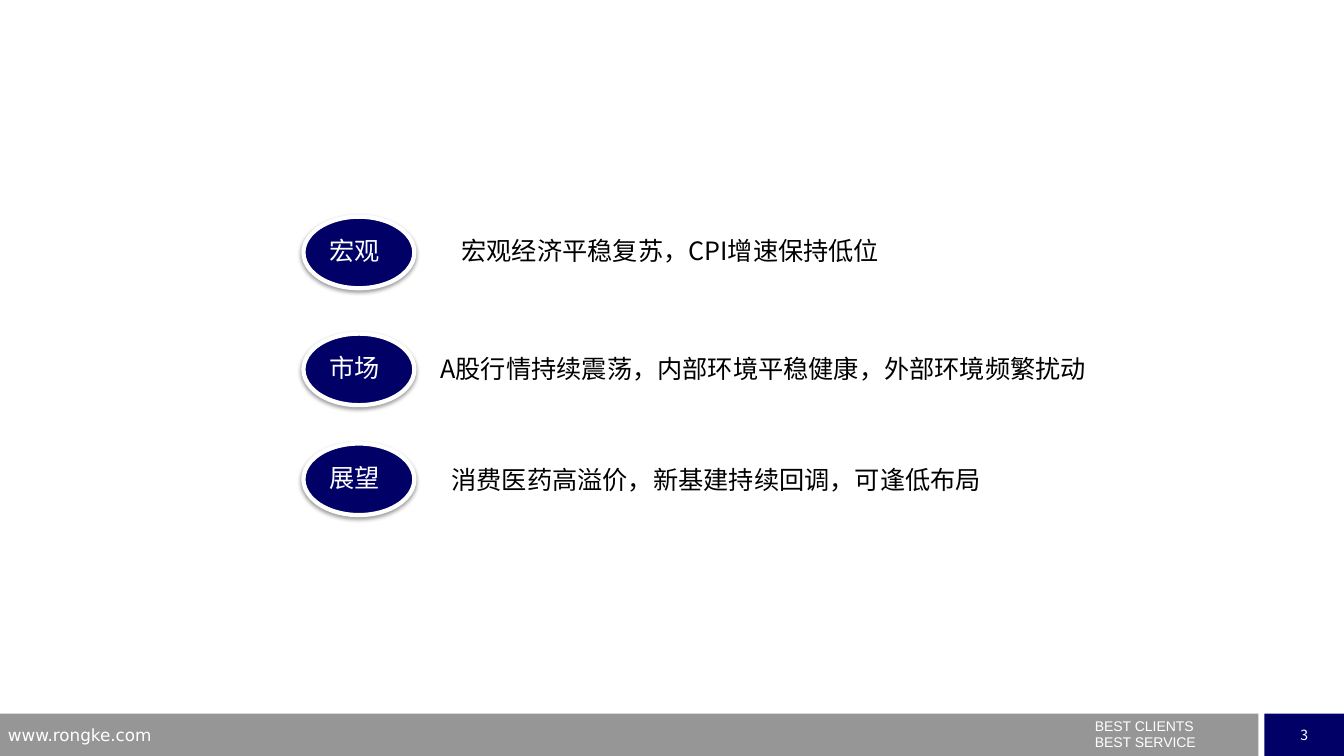
from lxml import etree
from pptx import Presentation
from pptx.dml.color import RGBColor
from pptx.enum.shapes import MSO_SHAPE as Shape
from pptx.enum.text import MSO_ANCHOR as Anchor, PP_ALIGN as Align
from pptx.oxml.ns import qn
from pptx.util import Inches, Pt

NAVY, GREY, WHITE, BLACK = "000066", "969696", "FFFFFF", "000000"
CJK = "Noto Sans CJK SC"
ROWS = [
    (2.15, "宏观", "宏观经济平稳复苏，CPI增速保持低位", 1.47, 0.14, 6.3),
    (3.31, "市场", "A股行情持续震荡，内部环境平稳健康，外部环境频繁扰动", 1.26, 0.15, 6.81),
    (4.4, "展望", "消费医药高溢价，新基建持续回调，可逢低布局", 1.37, 0.16, 6.12),
]


def color(hexa):
    """Turn a hex string into a colour."""
    return RGBColor.from_string(hexa)


def write(frame, text, size=18, font=CJK, ink=BLACK, align=Align.LEFT,
          lead=None, gap=0):
    """Fill a text frame, one paragraph for each line of text."""
    for i, line in enumerate(text.split("\n")):
        par = frame.add_paragraph() if i else frame.paragraphs[0]
        par.alignment = align
        par.line_spacing = lead
        if i and gap:
            par.space_before = Pt(gap)
        run = par.add_run()
        run.text = line
        run.font.size = Pt(size)
        run.font.name = font
        run.font.color.rgb = color(ink)
        props = run.font._element
        east = etree.SubElement(props, qn("a:ea"))
        east.set("typeface", font)


def label(slide, x, y, w, h, text, **style):
    """Add a wrapping text box."""
    frame = slide.shapes.add_textbox(*map(Inches, (x, y, w, h))).text_frame
    frame.word_wrap = True
    write(frame, text, **style)


def block(slide, kind, x, y, w, h, fill):
    """Add a plain filled shape without outline or shadow."""
    shape = slide.shapes.add_shape(kind, *map(Inches, (x, y, w, h)))
    shape.shadow.inherit = False
    shape.fill.solid()
    shape.fill.fore_color.rgb = color(fill)
    shape.line.fill.background()
    return shape


def shade(shape):
    """Drop a soft shadow straight below a shape."""
    effects = shape._element.spPr.find(qn("a:effectLst"))
    outer = etree.SubElement(effects, qn("a:outerShdw"), blurRad=str(Pt(3.1)),
                             dist=str(Pt(1.6)), dir="5400000", rotWithShape="0")
    tone = etree.SubElement(outer, qn("a:srgbClr"), val=BLACK)
    etree.SubElement(tone, qn("a:alpha"), val="38000")


def topic(slide, x, y, name, text, dx, dy, w):
    """Place one topic: an oval badge with its name, then its message."""
    oval = block(slide, Shape.OVAL, x, y, 1.1, 0.71, NAVY)
    oval.line.color.rgb = color(WHITE)
    oval.line.width = Pt(3)
    shade(oval)
    label(slide, x + 0.16, y + 0.14, 0.79, 0.4, name, ink=WHITE)
    label(slide, x + dx, y + dy, w, 0.4, text)


def footer(slide, x, y, w, h):
    """Place the bottom band with site, motto and page number."""
    side = 0.79
    block(slide, Shape.RECTANGLE, x, y, w - side - 0.06, h, GREY)
    page = block(slide, Shape.RECTANGLE, x + w - side, y, side, h, NAVY)
    page.text_frame.vertical_anchor = Anchor.MIDDLE
    page.text_frame.word_wrap = False
    write(page.text_frame, "3", size=10, ink=WHITE, align=Align.CENTER)
    label(slide, x + 10.76, y + 0.06, 2, 0.36, "BEST CLIENTS\nBEST SERVICE",
          size=10, font="Arial", ink=WHITE, lead=0.5, gap=5.75)
    label(slide, x - 0.02, y + 0.06, 3.22, 0.26, "www.rongke.com",
          size=12, font="DejaVu Sans", ink=WHITE)


def main():
    """Build and save the slide."""
    deck = Presentation()
    deck.slide_width, deck.slide_height = Inches(13.33), Inches(7.5)
    slide = deck.slides.add_slide(deck.slide_layouts[6])
    footer(slide, 0, 7.08, 13.33, 0.42)
    for y, *row in ROWS:
        topic(slide, 3.01, y, *row)
    deck.save("out.pptx")


if __name__ == "__main__":
    main()
